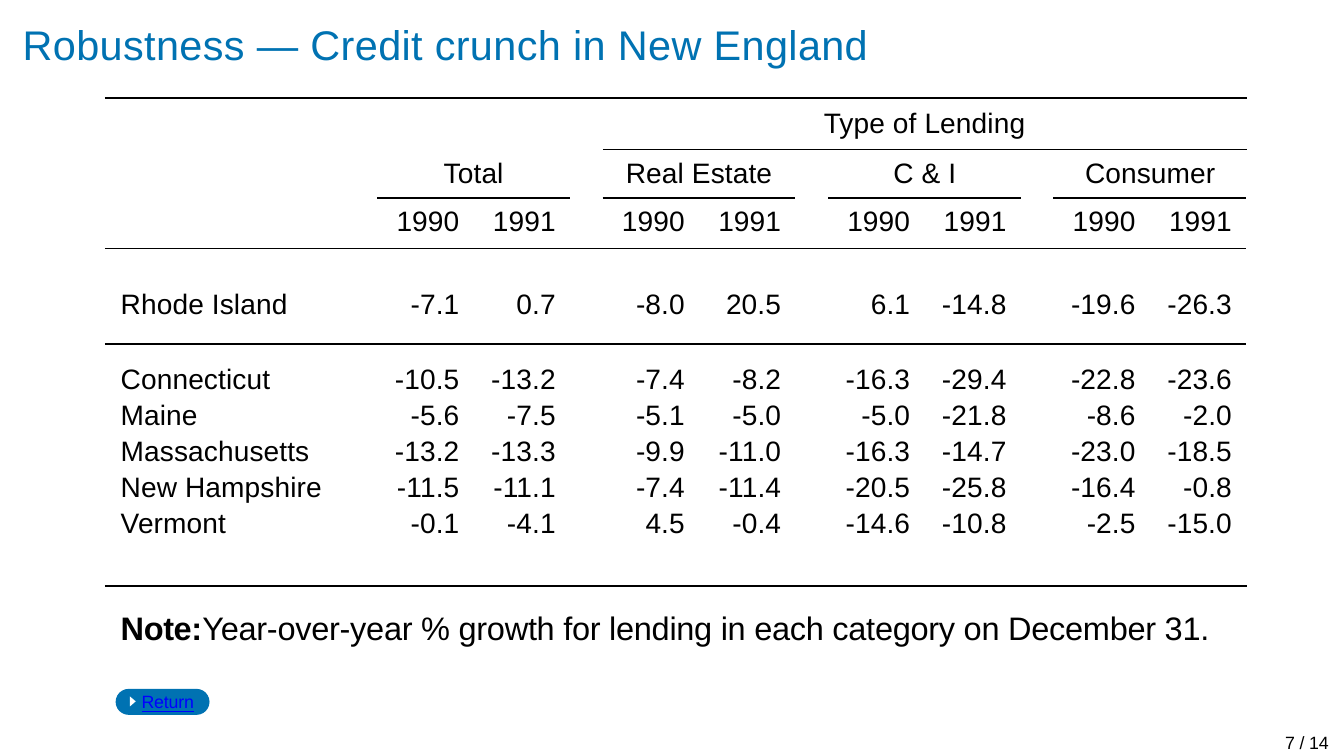
from dataclasses import dataclass

from lxml.etree import SubElement
from pptx import Presentation
from pptx.dml.color import RGBColor
from pptx.enum.shapes import MSO_CONNECTOR as Connector, MSO_SHAPE as Preset
from pptx.enum.text import MSO_ANCHOR as Anchor, PP_ALIGN as Align
from pptx.oxml.ns import qn
from pptx.util import Cm, Pt

# Content
TITLE = "Robustness — Credit crunch in New England"
SUPER_HEADING = "Type of Lending"
CATEGORIES = ["Total", "Real Estate", "C & I", "Consumer"]
YEARS = ["1990", "1991"]
GROWTH = [
    ("Rhode Island", "-7.1", "0.7", "-8.0", "20.5", "6.1", "-14.8", "-19.6", "-26.3"),
    ("Connecticut", "-10.5", "-13.2", "-7.4", "-8.2", "-16.3", "-29.4", "-22.8", "-23.6"),
    ("Maine", "-5.6", "-7.5", "-5.1", "-5.0", "-5.0", "-21.8", "-8.6", "-2.0"),
    ("Massachusetts", "-13.2", "-13.3", "-9.9", "-11.0", "-16.3", "-14.7", "-23.0", "-18.5"),
    ("New Hampshire", "-11.5", "-11.1", "-7.4", "-11.4", "-20.5", "-25.8", "-16.4", "-0.8"),
    ("Vermont", "-0.1", "-4.1", "4.5", "-0.4", "-14.6", "-10.8", "-2.5", "-15.0"),
]
NOTE_LABEL = "Note:"
NOTE = "Year-over-year % growth for lending in each category on December 31."
RETURN = "Return"
PAGE = "7 / 14"


@dataclass(frozen=True)
class Theme:
    font: str = "Arial"
    blue: str = "0072B2"
    black: str = "000000"
    white: str = "FFFFFF"
    link: str = "0000FF"
    title_size: float = 14
    note_size: float = 11
    table_size: float = 9.5
    small_size: float = 6
    thick: float = 0.78
    thin: float = 0.4


THEME = Theme()
NO_STYLE = "{2D5ABB26-0587-4C30-8999-92F81FD0307C}"

# Table geometry in centimetres
LEFT, TOP = 1.25, 2.36
LABEL_WIDTH, YEAR_WIDTH, GAP = 3.25, 1.15, 0.39
PAIR_WIDTH = YEAR_WIDTH * len(YEARS)
RIGHT = LEFT + LABEL_WIDTH + len(CATEGORIES) * (PAIR_WIDTH + GAP) - GAP
PAIR_LEFTS = [LEFT + LABEL_WIDTH + i * (PAIR_WIDTH + GAP) for i in range(len(CATEGORIES))]
ROW_HEIGHTS = [0.61, 1.14, 0.63] + [0.43] * 4
BOTTOM_MARGINS = [0.14, 0.29] + [0.02] * 5
CELL_INSET = 0.17


def set_attributes(target, values):
    for name, value in values.items():
        setattr(target, name, value)


def add_run(paragraph, text, size, color=THEME.black, spacing=0, **font_values):
    """Add a styled run; spacing is in hundredths of a point."""
    run = paragraph.add_run()
    run.text = text
    set_attributes(run.font, {"name": THEME.font, "size": Pt(size), **font_values})
    run.font.color.rgb = RGBColor.from_string(color)
    if spacing:
        run.font._element.set("spc", str(spacing))


def prepare_frame(shape, align=Align.LEFT):
    """Clear the insets of a shape and return its first paragraph."""
    frame = shape.text_frame
    set_attributes(frame, {
        "margin_left": 0, "margin_right": 0, "margin_top": 0, "margin_bottom": 0,
        "vertical_anchor": Anchor.MIDDLE, "word_wrap": False,
    })
    frame.paragraphs[0].alignment = align
    return frame.paragraphs[0]


def add_text(slide, box, text, size, align=Align.LEFT, **run_values):
    shape = slide.shapes.add_textbox(*map(Cm, box))
    paragraph = prepare_frame(shape, align)
    add_run(paragraph, text, size, **run_values)
    return paragraph


def add_rule(slide, left, top, width_points):
    rule = slide.shapes.add_connector(
        Connector.STRAIGHT, Cm(left), Cm(top), Cm(RIGHT), Cm(top))
    rule.line.color.rgb = RGBColor.from_string(THEME.black)
    rule.line.width = Pt(width_points)
    SubElement(rule._element.spPr, qn("a:effectLst"))


def paint(shape, color):
    shape.shadow.inherit = False
    shape.fill.solid()
    shape.fill.fore_color.rgb = RGBColor.from_string(color)
    shape.line.fill.background()


def add_border(cell, side, width_points):
    border = SubElement(cell._tc.get_or_add_tcPr(), qn(f"a:{side}"), w=str(Pt(width_points)))
    fill = SubElement(border, qn("a:solidFill"))
    SubElement(fill, qn("a:srgbClr"), val=THEME.black)


def spread(label, values):
    """Lay a label and its yearly values out with an empty cell between categories."""
    cells = [label]
    for start in range(0, len(values), len(YEARS)):
        cells += ([""] if start else []) + list(values[start:start + len(YEARS)])
    return cells


def fill_cell(cell, text, row, column):
    set_attributes(cell, {
        "margin_left": Cm(0 if column else 0.19), "margin_right": Cm(CELL_INSET if column else 0),
        "margin_top": 0, "margin_bottom": Cm(BOTTOM_MARGINS[row]),
        "vertical_anchor": Anchor.BOTTOM,
    })
    paragraph = cell.text_frame.paragraphs[0]
    if text:
        paragraph.alignment = Align.RIGHT if column else Align.LEFT
        add_run(paragraph, text, THEME.table_size, spacing=5)
    else:
        SubElement(paragraph._p, qn("a:endParaRPr"), sz=str(int(THEME.small_size * 100)))
    if row == 0 and text:
        add_border(cell, "lnT", THEME.thick)
    if row < 2:
        add_border(cell, "lnB", THEME.thick if row else THEME.thin)
    cell.fill.background()


def add_growth_table(slide):
    rows = [spread("", YEARS * len(CATEGORIES))]
    rows += [spread(label, values) for label, *values in GROWTH]
    table = slide.shapes.add_table(
        len(rows), len(rows[0]), Cm(LEFT), Cm(TOP),
        Cm(RIGHT - LEFT), Cm(sum(ROW_HEIGHTS))).table
    set_attributes(table, {"first_row": False, "horz_banding": False})
    table._tbl.tblPr.find(qn("a:tableStyleId")).text = NO_STYLE
    widths = [LABEL_WIDTH] + ([YEAR_WIDTH] * len(YEARS) + [GAP]) * len(CATEGORIES)
    for column, width in zip(table.columns, widths):
        column.width = Cm(width)
    for r, texts in enumerate(rows):
        table.rows[r].height = Cm(ROW_HEIGHTS[r])
        for c, text in enumerate(texts):
            fill_cell(table.cell(r, c), text, r, c)


def add_headings(slide):
    lending_left = PAIR_LEFTS[1]
    headings = [(SUPER_HEADING, lending_left, 1.22, RIGHT - lending_left)]
    headings += [(name, left, 1.82, PAIR_WIDTH) for name, left in zip(CATEGORIES, PAIR_LEFTS)]
    for text, left, top, width in headings:
        add_text(slide, (left, top, width, 0.48), text, THEME.table_size, Align.CENTER, spacing=5)
    for left, top, width_points in [(LEFT, 1.17, THEME.thick), (lending_left, 1.78, THEME.thin),
                                    (LEFT, 6.99, THEME.thick)]:
        add_rule(slide, left, top, width_points)


def add_return_button(slide):
    pill = slide.shapes.add_shape(
        Preset.ROUNDED_RECTANGLE, Cm(1.38), Cm(8.22), Cm(1.12), Cm(0.31))
    pill.adjustments[0] = 0.5
    paint(pill, THEME.blue)
    builder = slide.shapes.build_freeform(Cm(1.55), Cm(8.31))
    builder.add_line_segments([(Cm(1.55), Cm(8.43)), (Cm(1.62), Cm(8.37))], close=True)
    paint(builder.convert_to_shape(), THEME.white)
    add_text(slide, (1.69, 8.21, 0.7, 0.33), RETURN, THEME.small_size,
             color=THEME.link, spacing=-5, underline=True)


def main():
    presentation = Presentation()
    set_attributes(presentation, {"slide_width": Cm(16.03), "slide_height": Cm(9.02)})
    slide = presentation.slides.add_slide(presentation.slide_layouts[5])

    title = slide.shapes.title
    set_attributes(title, {"left": Cm(0.27), "top": Cm(0.18), "width": Cm(10.3), "height": Cm(0.69)})
    add_run(prepare_frame(title), TITLE, THEME.title_size, THEME.blue, 12)

    add_headings(slide)
    add_growth_table(slide)
    note = add_text(slide, (1.44, 7.22, 13.13, 0.53), NOTE_LABEL, THEME.note_size,
                    spacing=-15, bold=True)
    add_run(note, NOTE, THEME.note_size, spacing=-10)
    add_return_button(slide)
    add_text(slide, (15.22, 8.71, 0.63, 0.3), PAGE, THEME.small_size, Align.RIGHT, spacing=-5)
    presentation.save("out.pptx")


if __name__ == "__main__":
    main()
